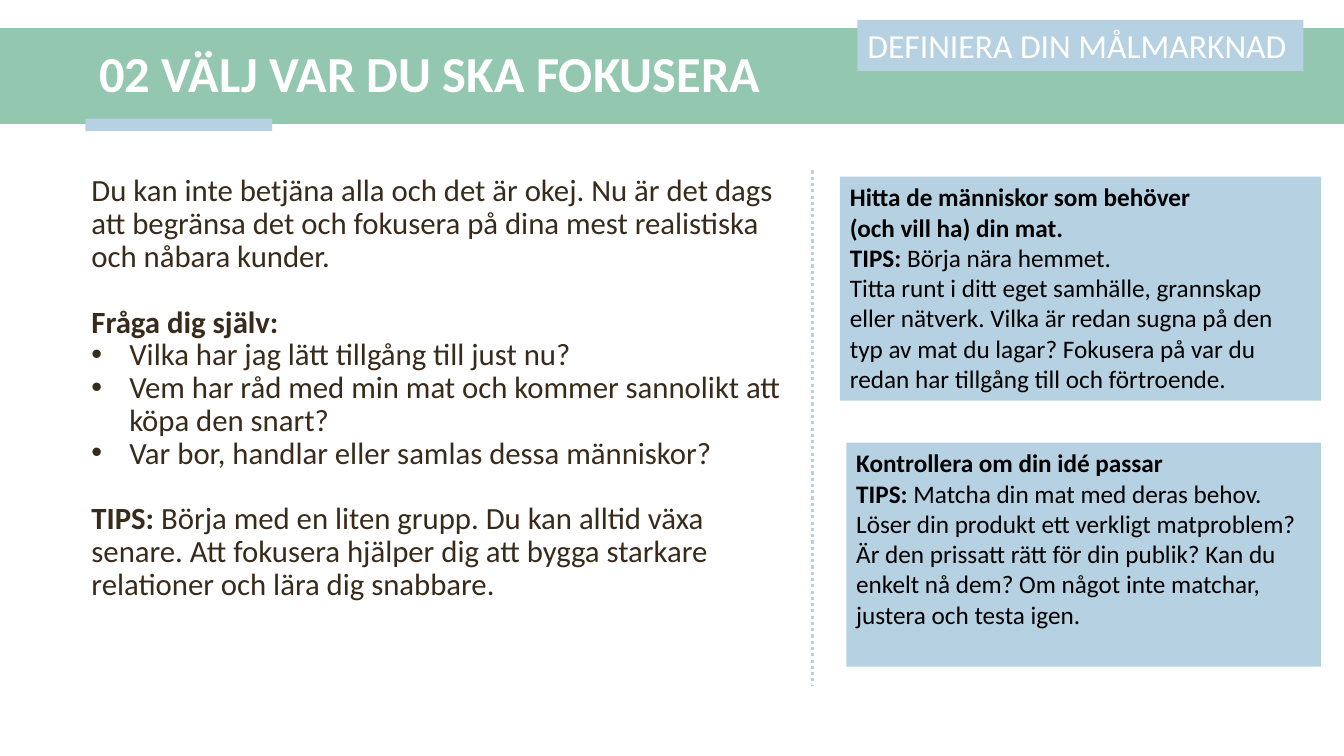
from dataclasses import dataclass

from lxml import etree
from pptx import Presentation
from pptx.dml.color import RGBColor
from pptx.enum.dml import MSO_LINE
from pptx.enum.shapes import MSO_CONNECTOR, MSO_SHAPE
from pptx.enum.text import MSO_ANCHOR, PP_ALIGN
from pptx.oxml.ns import qn
from pptx.shapes.autoshape import Shape
from pptx.shapes.shapetree import SlideShapes
from pptx.util import Pt

RECT = MSO_SHAPE.RECTANGLE
LINE = MSO_CONNECTOR.STRAIGHT
DOTS = MSO_LINE.ROUND_DOT
TOP = MSO_ANCHOR.TOP
MIDDLE = MSO_ANCHOR.MIDDLE
LEFT = PP_ALIGN.LEFT

FONT = "Calibri"
COLORS = {"green": "94C7B0", "blue": "B6D1E1", "white": "FFFFFF",
          "brown": "382B1B", "black": "000000"}
LEADING = 23.4
INDENT = 27


@dataclass
class Para:
    """A paragraph with a bold lead followed by plain text."""
    lead: str = ""
    rest: str = ""
    bullet: bool = False
    before: float = 0


@dataclass
class Box:
    left: float
    top: float
    width: float
    height: float
    paras: tuple[Para, ...] = ()
    size: float = 18
    color: str = "black"
    fill: str | None = None
    anchor: MSO_ANCHOR = TOP
    spacing: float | Pt | None = None


BOXES = [
    Box(0, 20, 960, 68.5, fill="green"),
    Box(61, 84.75, 133.5, 9, fill="blue"),
    Box(64, 26, 859, 57, (Para("02 VÄLJ VAR DU SKA FOKUSERA"),),
        36, "white", anchor=MIDDLE, spacing=0.9),
    Box(58.25, 121.75, 510.5, 368, (
        Para(rest="Du kan inte betjäna alla och det är okej. Nu är det dags att "
                  "begränsa det och fokusera på dina mest realistiska och nåbara kunder."),
        Para("Fråga dig själv:", before=LEADING),
        Para(rest="Vilka har jag lätt tillgång till just nu?", bullet=True),
        Para(rest="Vem har råd med min mat och kommer sannolikt att köpa den snart?",
             bullet=True),
        Para(rest="Var bor, handlar eller samlas dessa människor?", bullet=True),
        Para("TIPS: ", "Börja med en liten grupp. Du kan alltid växa senare. Att fokusera "
             "hjälper dig att bygga starkare relationer och lära dig snabbare.",
             before=LEADING),
    ), 22, "brown", spacing=Pt(LEADING)),
    Box(612.5, 14.25, 318.5, 36.5, (Para(rest="DEFINIERA DIN MÅLMARKNAD"),),
        24, "white", "blue"),
    Box(600, 126.25, 343.5, 160, (
        Para("Hitta de människor som behöver"),
        Para("(och vill ha) din mat."),
        Para("TIPS: ", "Börja nära hemmet."),
        Para(rest="Titta runt i ditt eget samhälle, grannskap eller nätverk. Vilka är "
                  "redan sugna på den typ av mat du lagar? Fokusera på var du redan har "
                  "tillgång till och förtroende."),
    ), fill="blue"),
    Box(604.5, 316.25, 339, 160, (
        Para("Kontrollera om din idé passar"),
        Para("TIPS: ", "Matcha din mat med deras behov."),
        Para(rest="Löser din produkt ett verkligt matproblem? Är den prissatt rätt för din "
                  "publik? Kan du enkelt nå dem? Om något inte matchar, justera och testa "
                  "igen."),
    ), fill="blue"),
]


def paint(name: str) -> RGBColor:
    return RGBColor.from_string(COLORS[name])


def write(shape: Shape, box: Box) -> None:
    frame = shape.text_frame
    frame.word_wrap = True
    frame.vertical_anchor = box.anchor
    frame.text = "\n".join(item.lead or item.rest for item in box.paras)
    for para, item in zip(frame.paragraphs, box.paras):
        para.alignment = LEFT
        para.line_spacing = box.spacing
        if item.before:
            para.space_before = Pt(item.before)
        if item.bullet:
            props = para._p.get_or_add_pPr()
            props.set("marL", str(Pt(INDENT)))
            props.set("indent", str(-Pt(INDENT)))
            etree.SubElement(props, qn("a:buFont")).set("typeface", "Arial")
            etree.SubElement(props, qn("a:buChar")).set("char", "•")
        if item.lead and item.rest:
            para.add_run().text = item.rest
        for index, run in enumerate(para.runs):
            run.font.name = FONT
            run.font.size = Pt(box.size)
            run.font.bold = bool(item.lead) and index == 0
            run.font.color.rgb = paint(box.color)


def draw(shapes: SlideShapes, box: Box) -> None:
    place = Pt(box.left), Pt(box.top), Pt(box.width), Pt(box.height)
    if box.fill:
        shape = shapes.add_shape(RECT, *place)
        shape.shadow.inherit = False
        shape.fill.solid()
        shape.fill.fore_color.rgb = paint(box.fill)
        shape.line.fill.background()
    else:
        shape = shapes.add_textbox(*place)
    if box.paras:
        write(shape, box)


def divide(shapes: SlideShapes, left: float, top: float, end: float) -> None:
    """Draw the dotted upright line between the columns."""
    rule = shapes.add_connector(LINE, Pt(left), Pt(top), Pt(left), Pt(end))
    rule.line.color.rgb = paint("blue")
    rule.line.width = Pt(2.25)
    rule.line.dash_style = DOTS
    etree.SubElement(rule._element.spPr, qn("a:effectLst"))


def main() -> None:
    deck = Presentation()
    deck.slide_width, deck.slide_height = Pt(960), Pt(540)
    slide = deck.slides.add_slide(deck.slide_layouts[6])
    for box in BOXES:
        draw(slide.shapes, box)
    divide(slide.shapes, 580.25, 121.75, 490.25)
    deck.save("out.pptx")


if __name__ == "__main__":
    main()
